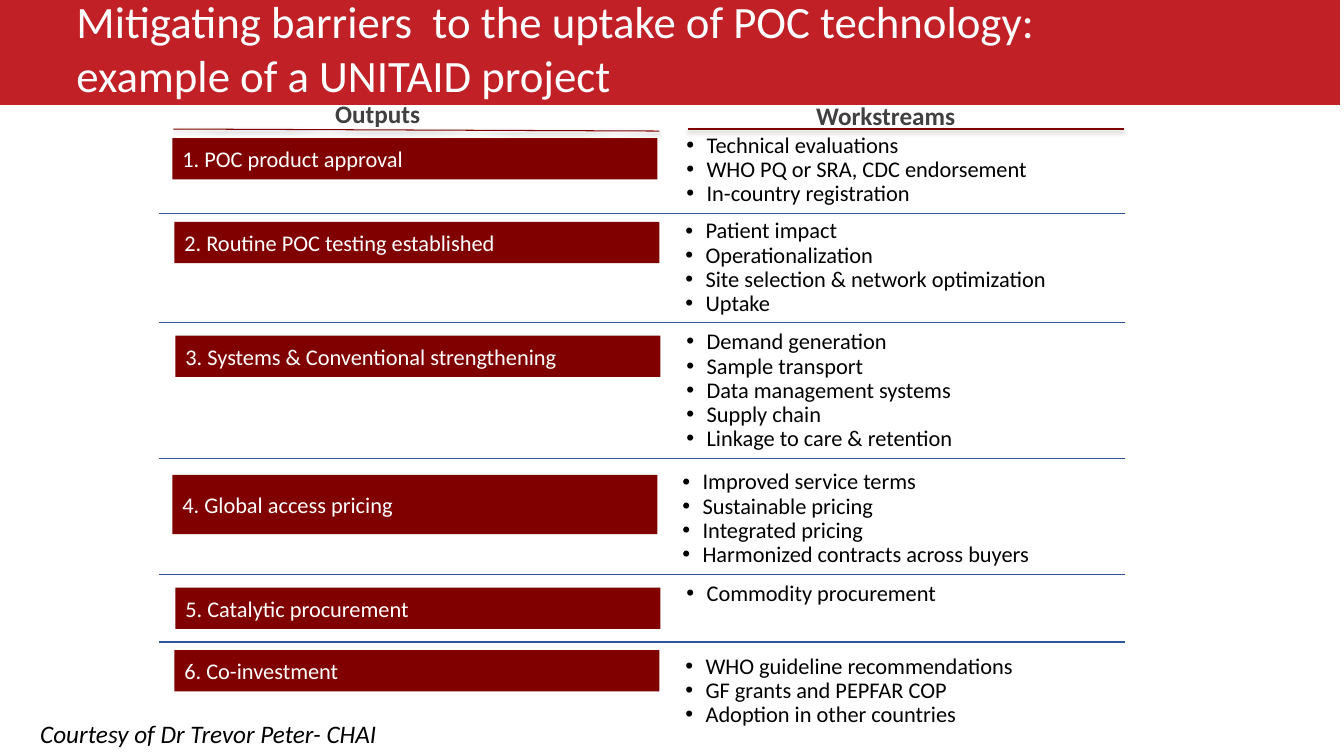
"""Build the slide on outputs and workstreams for the uptake of POC technology."""
from dataclasses import dataclass

from lxml import etree
from pptx import Presentation
from pptx import util as u
from pptx.dml.color import RGBColor
from pptx.enum import shapes, text
from pptx.oxml import ns

WIDTH, HEIGHT = u.Inches(13.33), u.Inches(7.5)
CELL = HEIGHT / 75
FONT = "Calibri"
RED, MAROON, BLUE = "C02026", "800000", "2F5597"
WHITE, BLACK, GREY = "FFFFFF", "000000", "404040"
BOX_COLUMNS, LIST_COLUMNS = 48.1, 46.2
BOX_ROWS, ITEM_ROWS, PADDING_ROWS = 4.1, 2.44, 1
RULE_START, RULE_END = 15.8, 111.6


@dataclass(frozen=True)
class Area:
    """A rectangle in columns and rows of the grid."""
    left: float
    top: float
    columns: float
    rows: float


@dataclass(frozen=True)
class Style:
    """The look of a piece of text."""
    size: float
    color: str
    bold: bool = False
    italic: bool = False
    centered: bool = False
    bulleted: bool = False


@dataclass(frozen=True)
class Label:
    """A free-standing text."""
    area: Area
    lines: tuple[str, ...]
    style: Style


@dataclass(frozen=True)
class Rule:
    """A straight line between two grid points."""
    start: tuple[float, float]
    end: tuple[float, float]
    color: str
    weight: float
    shadowed: bool = False


@dataclass(frozen=True)
class Output:
    """An output with its workstreams, the corners of its box and list."""
    title: str
    box_left: float
    box_top: float
    list_left: float
    list_top: float
    workstreams: tuple[str, ...]
    box_rows: float = BOX_ROWS


BOX_STYLE = Style(16, WHITE)
LIST_STYLE = Style(16, BLACK, bulleted=True)
HEADING_STYLE = Style(18, GREY, bold=True, centered=True)

LABELS = (
    Label(Area(6.6, -1.1, 114.1, 11.8),
          ("Mitigating barriers  to the uptake of POC technology:",
           "example of a UNITAID project"), Style(32, WHITE)),
    Label(Area(66.6, 9.5, 42.5, 4), ("Workstreams",), HEADING_STYLE),
    Label(Area(15.9, 9.3, 43.1, 4), ("Outputs",), HEADING_STYLE),
    Label(Area(3, 70.8, 38.1, 4), ("Courtesy of Dr Trevor Peter- CHAI",),
          Style(18, BLACK, italic=True)),
)

OUTPUTS = (
    Output("1. POC product approval", 17.1, 13.7, 67.1, 12.8,
           ("Technical evaluations", "WHO PQ or SRA, CDC endorsement",
            "In-country registration")),
    Output("2. Routine POC testing established", 17.3, 22, 67, 21.3,
           ("Patient impact", "Operationalization",
            "Site selection & network optimization", "Uptake")),
    Output("3. Systems & Conventional strengthening", 17.4, 33.3, 67.1, 32.3,
           ("Demand generation", "Sample transport", "Data management systems",
            "Supply chain", "Linkage to care & retention")),
    Output("4. Global access pricing", 17.1, 47.1, 66.7, 46.2,
           ("Improved service terms", "Sustainable pricing",
            "Integrated pricing", "Harmonized contracts across buyers"), 5.9),
    Output("5. Catalytic procurement", 17.4, 58.3, 67.1, 57.3,
           ("Commodity procurement",)),
    Output("6. Co-investment", 17.3, 64.5, 67, 64.5,
           ("WHO guideline recommendations", "GF grants and PEPFAR COP",
            "Adoption in other countries")),
)

RULES = (
    Rule((68.2, 12.8), (111.5, 12.8), MAROON, 0.75, True),
    Rule((17.2, 12.8), (65.4, 13), MAROON, 0.75, True),
    *(Rule((RULE_START, row), (RULE_END, row), BLUE, 1)
      for row in (21.2, 32, 45.5, 57, 63.7)),
)


def grid(count: float) -> int:
    """Turn a number of grid cells into a length."""
    return round(count * CELL)


def rgb(color: str) -> RGBColor:
    """Turn a hex string into a colour."""
    return RGBColor.from_string(color)


def frame(area: Area) -> tuple[int, int, int, int]:
    """Give left, top, width and height of an area."""
    return grid(area.left), grid(area.top), grid(area.columns), grid(area.rows)


def add_bullet(paragraph) -> None:
    """Give a paragraph a hanging round bullet."""
    properties = paragraph._p.get_or_add_pPr()
    properties.set("marL", str(grid(2)))
    properties.set("indent", str(-grid(2)))
    etree.SubElement(properties, ns.qn("a:buFont"), typeface="Arial")
    etree.SubElement(properties, ns.qn("a:buChar"), char="•")


def write(text_frame, lines: tuple[str, ...], style: Style) -> None:
    """Fill a text frame with one paragraph per line."""
    text_frame.word_wrap = True
    text_frame.text = "\n".join(lines)
    for paragraph in text_frame.paragraphs:
        paragraph.alignment = (text.PP_ALIGN.CENTER if style.centered
                               else text.PP_ALIGN.LEFT)
        if style.bulleted:
            paragraph.line_spacing = 0.9
            add_bullet(paragraph)
        for run in paragraph.runs:
            run.font.name = FONT
            run.font.size = u.Pt(style.size)
            run.font.bold = style.bold
            run.font.italic = style.italic
            run.font.color.rgb = rgb(style.color)


def add_box(slide, area: Area, color: str):
    """Draw a plain filled rectangle."""
    shape = slide.shapes.add_shape(shapes.MSO_SHAPE.RECTANGLE, *frame(area))
    shape.shadow.inherit = False
    shape.fill.solid()
    shape.fill.fore_color.rgb = rgb(color)
    shape.line.fill.background()
    return shape


def add_label(slide, label: Label) -> None:
    """Draw a free-standing text."""
    shape = slide.shapes.add_textbox(*frame(label.area))
    write(shape.text_frame, label.lines, label.style)


def add_rule(slide, rule: Rule) -> None:
    """Draw a line, with a soft shadow below it if asked."""
    connector = slide.shapes.add_connector(
        shapes.MSO_CONNECTOR.STRAIGHT, *map(grid, rule.start + rule.end))
    connector.line.color.rgb = rgb(rule.color)
    connector.line.width = u.Pt(rule.weight)
    effects = etree.SubElement(connector._element.spPr, ns.qn("a:effectLst"))
    if rule.shadowed:
        shadow = etree.SubElement(
            effects, ns.qn("a:outerShdw"), blurRad=str(u.Pt(3.1)),
            dist=str(u.Pt(1.6)), dir="5400000", rotWithShape="0")
        tint = etree.SubElement(shadow, ns.qn("a:srgbClr"), val=BLACK)
        etree.SubElement(tint, ns.qn("a:alpha"), val="38000")


def add_output(slide, output: Output) -> None:
    """Draw the box of an output and the list of its workstreams."""
    box = add_box(slide, Area(output.box_left, output.box_top, BOX_COLUMNS,
                              output.box_rows), MAROON)
    box.text_frame.vertical_anchor = text.MSO_ANCHOR.MIDDLE
    write(box.text_frame, (output.title,), BOX_STYLE)
    rows = len(output.workstreams) * ITEM_ROWS + PADDING_ROWS
    area = Area(output.list_left, output.list_top, LIST_COLUMNS, rows)
    add_label(slide, Label(area, output.workstreams, LIST_STYLE))


def main() -> None:
    """Build and save the presentation."""
    presentation = Presentation()
    presentation.slide_width, presentation.slide_height = WIDTH, HEIGHT
    slide = presentation.slides.add_slide(presentation.slide_layouts[6])
    add_box(slide, Area(-0.4, -0.6, 133.3, 11), RED)
    for label in LABELS:
        add_label(slide, label)
    for rule in RULES:
        add_rule(slide, rule)
    for output in OUTPUTS:
        add_output(slide, output)
    presentation.save("out.pptx")


if __name__ == "__main__":
    main()
